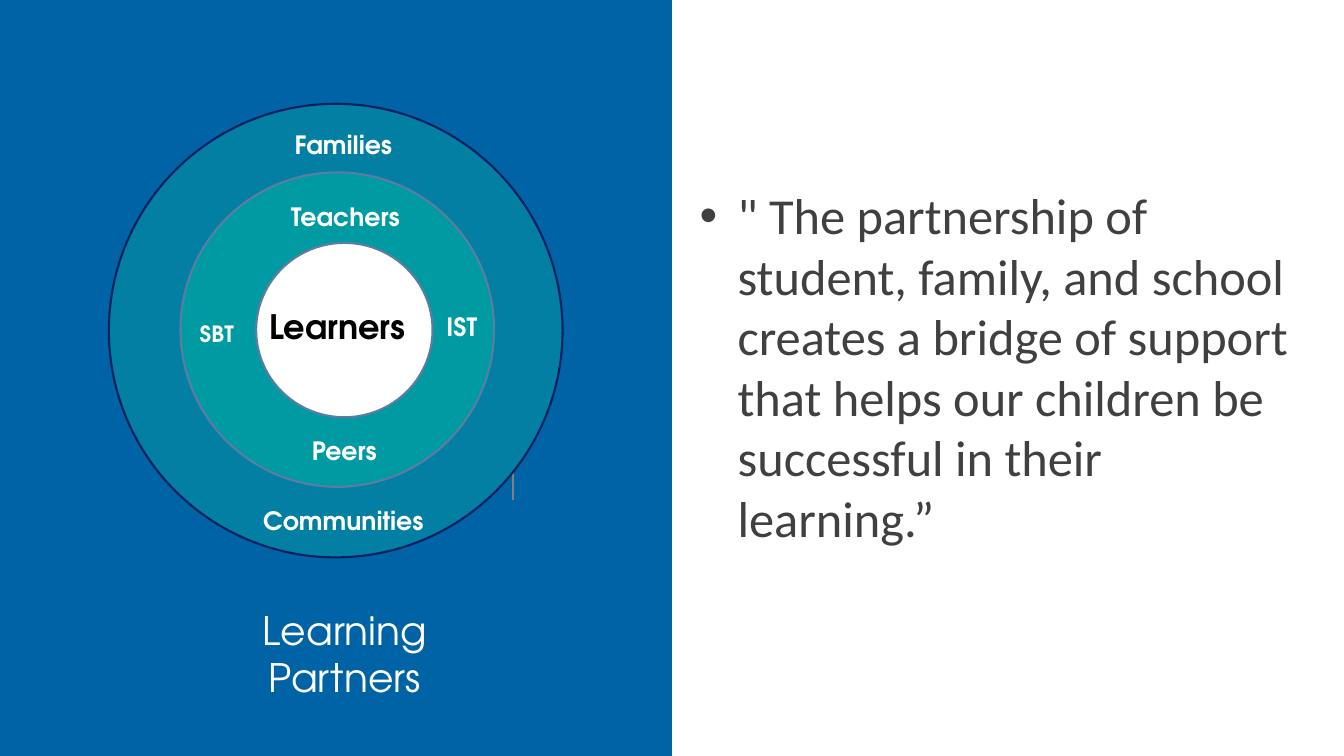
from lxml.etree import SubElement
from pptx import Presentation
from pptx.dml.color import RGBColor
from pptx.enum.shapes import MSO_CONNECTOR, MSO_SHAPE
from pptx.enum.text import MSO_ANCHOR, MSO_AUTO_SIZE, PP_ALIGN
from pptx.oxml.ns import qn
from pptx.util import Inches, Pt

WIDTH, HEIGHT = 13.33, 7.5
COLORS = {
    "panel": "0063A6", "community": "027FA3", "school": "009AA3",
    "white": "FFFFFF", "black": "000000", "navy": "002060",
    "ring": "5C7CA1", "gray": "808080", "quote": "404040",
}
FONT = "TeX Gyre Adventor"
RINGS = [
    (1.08, 1.03, 4.5, 4.5, "community", "navy"),
    (1.79, 1.71, 3.11, 3.12, "school", "ring"),
    (2.54, 2.41, 1.75, 1.73, "white", "ring"),
]
LABELS = [
    ("Families", 2.54, 1.23, 1.73, 0.41, 18, "white"),
    ("Teachers", 2.56, 1.95, 1.73, 0.41, 18, "white"),
    ("SBT", 1.52, 3.13, 1.26, 0.37, 16, "white"),
    ("Learners", 2.48, 2.99, 1.73, 0.5, 24, "black"),
    ("IST", 4.11, 3.04, 0.94, 0.4, 18, "white"),
    ("Peers", 2.55, 4.27, 1.73, 0.41, 18, "white"),
    ("Communities", 2.46, 4.96, 1.89, 0.41, 18, "white"),
]


def rgb(name):
    """Return the named palette colour."""
    return RGBColor.from_string(COLORS[name])


def place(shape, left, top, width, height):
    """Move a shape to a box given in inches."""
    shape.left, shape.top = Inches(left), Inches(top)
    shape.width, shape.height = Inches(width), Inches(height)


def write(shape, words, size, color, font=FONT, bold=False, align=PP_ALIGN.CENTER):
    """Fill a shape with one formatted paragraph."""
    frame = shape.text_frame
    frame.text = words
    frame.word_wrap = True
    frame.auto_size = MSO_AUTO_SIZE.NONE
    paragraph = frame.paragraphs[0]
    paragraph.alignment = align
    paragraph.space_before = Pt(0)
    style = paragraph.runs[0].font
    style.name, style.size, style.bold = font, Pt(size), bold
    style.color.rgb = rgb(color)


def add_panel(slide, width, height):
    """Lay the coloured panel behind everything else."""
    panel = slide.shapes.add_shape(MSO_SHAPE.RECTANGLE, 0, 0, Inches(width), Inches(height))
    panel.shadow.inherit = False
    panel.fill.solid()
    panel.fill.fore_color.rgb = rgb("panel")
    panel.line.fill.background()
    slide.shapes._spTree.insert(2, panel._element)


def add_circles(slide, left, top):
    """Draw the nested circles of partners with their labels."""
    x = Inches(left + 5.09)
    stem = slide.shapes.add_connector(
        MSO_CONNECTOR.STRAIGHT, x, Inches(top + 1.96), x, Inches(top + 4.96))
    stem.line.color.rgb = rgb("gray")
    stem.line.width = Pt(1)
    SubElement(stem._element.spPr, qn("a:effectLst"))
    for ring_x, ring_y, width, height, fill, outline in RINGS:
        ring = slide.shapes.add_shape(
            MSO_SHAPE.OVAL, Inches(left + ring_x), Inches(top + ring_y),
            Inches(width), Inches(height))
        ring.shadow.inherit = False
        ring.fill.solid()
        ring.fill.fore_color.rgb = rgb(fill)
        ring.line.color.rgb = rgb(outline)
        ring.line.width = Pt(1.5)
    for words, label_x, label_y, width, height, size, color in LABELS:
        label = slide.shapes.add_textbox(
            Inches(left + label_x), Inches(top + label_y), Inches(width), Inches(height))
        write(label, words, size, color, bold=True)


def set_title(slide, left, top, width, height):
    """Put the slide title below the circles."""
    title = slide.shapes.title
    place(title, left, top, width, height)
    write(title, "Learning Partners", 28, "white")
    title.text_frame.vertical_anchor = MSO_ANCHOR.TOP


def set_quote(slide, left, top, width, height):
    """Put the quotation into the body placeholder."""
    quote = slide.placeholders[1]
    place(quote, left, top, width, height)
    quote.text_frame.text = ""
    properties = quote.text_frame.paragraphs[0]._p.get_or_add_pPr()
    properties.set("marL", str(Inches(0.5)))
    properties.set("indent", "0")
    SubElement(properties, qn("a:buNone"))
    write(quote, "\" The partnership of student, family, and school creates a bridge of "
          "support that helps our children be successful in their learning.”",
          36, "quote", font="Calibri", align=PP_ALIGN.LEFT)
    frame = quote.text_frame
    frame.vertical_anchor = MSO_ANCHOR.MIDDLE
    frame.margin_left = frame.margin_right = Inches(0.5)
    frame.margin_top, frame.margin_bottom = Inches(0.2), Inches(0.44)


def main():
    """Build and save the slide."""
    deck = Presentation()
    deck.slide_width, deck.slide_height = Inches(WIDTH), Inches(HEIGHT)
    slide = deck.slides.add_slide(deck.slide_layouts[1])
    add_panel(slide, WIDTH / 2, HEIGHT)
    add_circles(slide, 0, 0)
    set_title(slide, 1.86, 5.96, 3.12, 1.04)
    set_quote(slide, 6.44, 1.44, 6.98, 4.62)
    deck.save("out.pptx")


if __name__ == "__main__":
    main()
